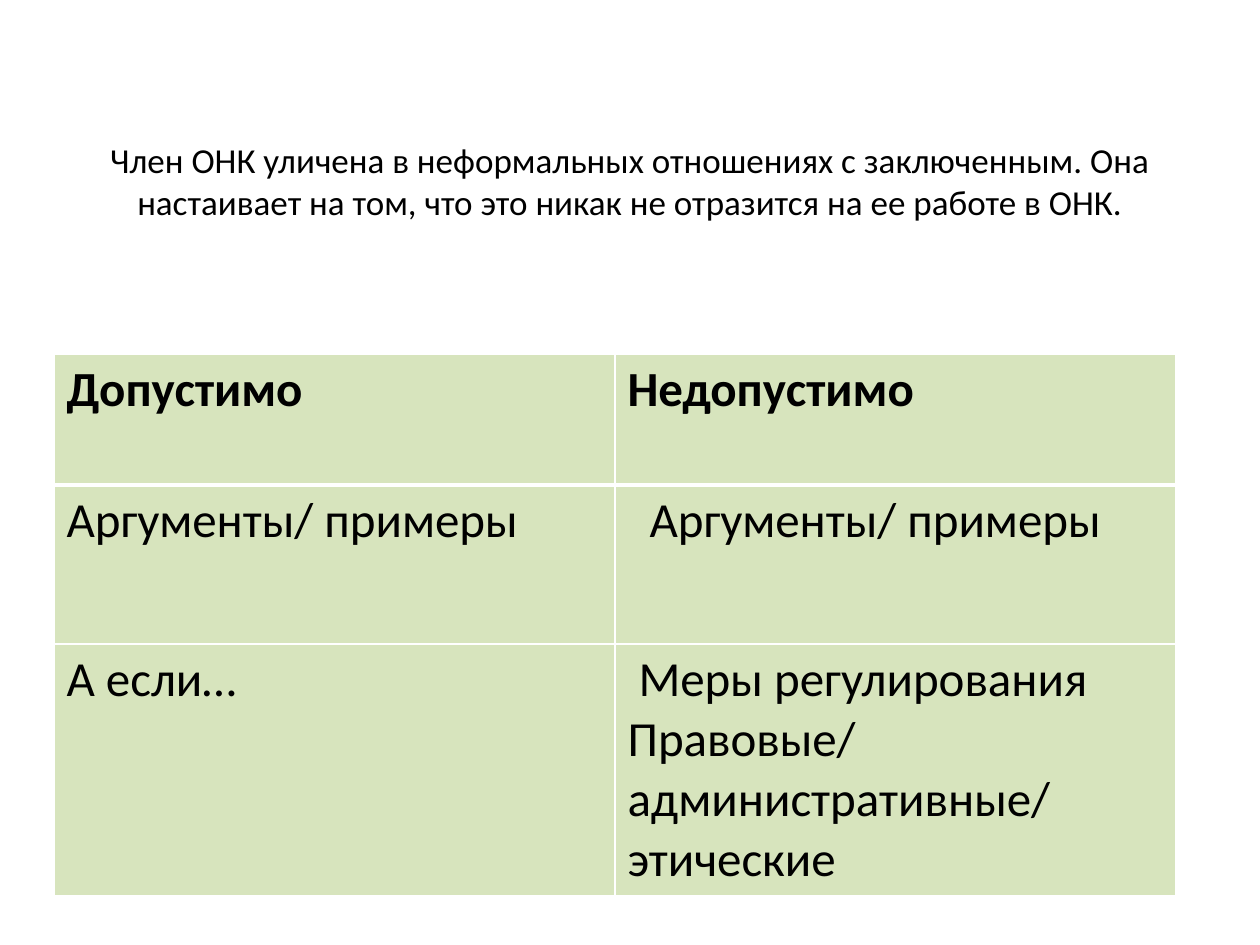
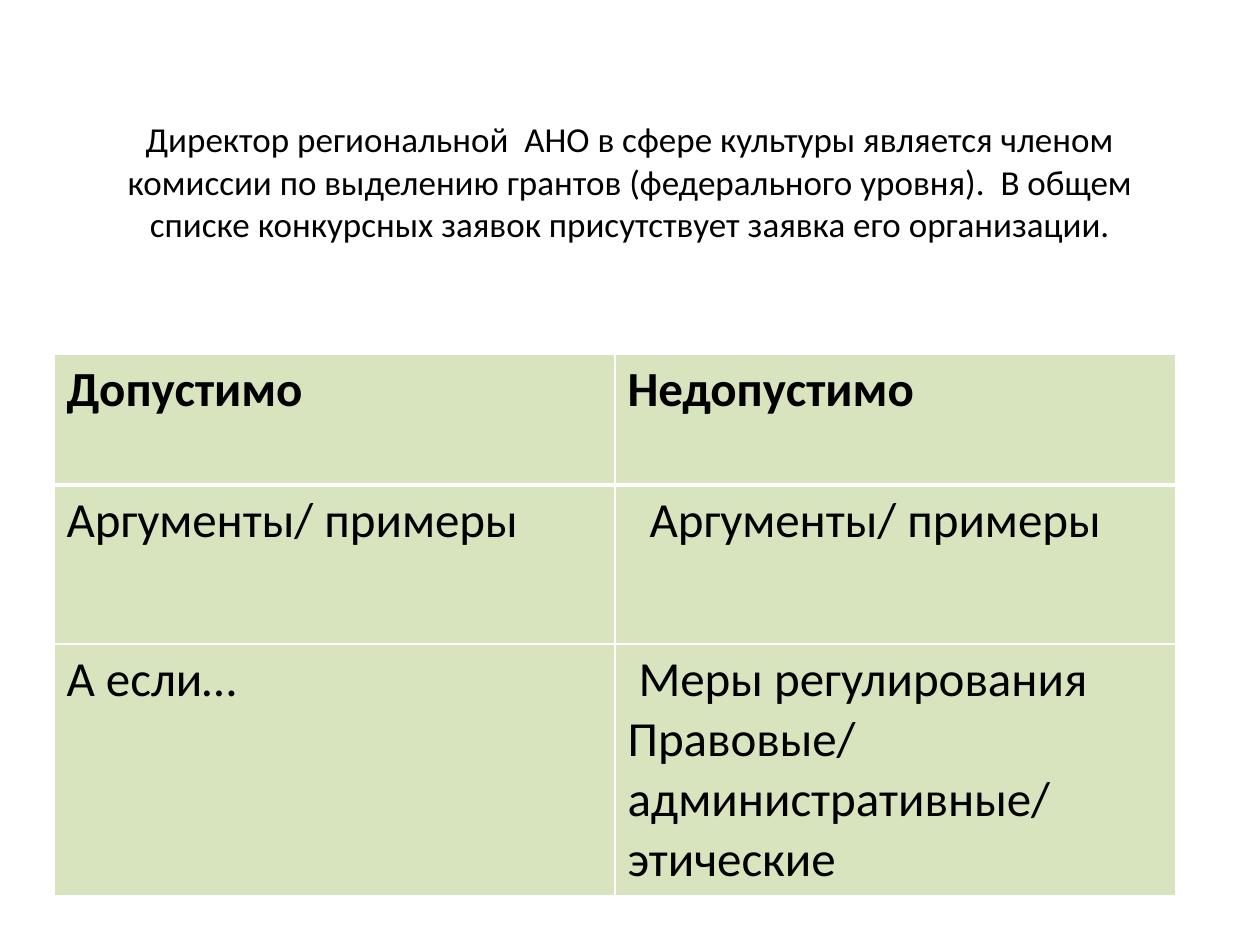
from lxml.etree import SubElement
from pptx import Presentation
from pptx.dml.color import RGBColor
from pptx.enum.text import MSO_ANCHOR, PP_ALIGN
from pptx.oxml.ns import qn
from pptx.util import Pt

PX = 914400 // 126
COLORS = {"text": "000000", "cell": "D7E4BD", "border": "FFFFFF"}
FONT = "Calibri"

CASES = [
    "Член ОНК уличена в неформальных отношениях с заключенным. "
    "Она настаивает на том, что это никак не отразится на ее работе в ОНК.",
    "Директор региональной  АНО в сфере культуры является членом комиссии "
    "по выделению грантов (федерального уровня).  В общем списке конкурсных "
    "заявок присутствует заявка его организации.",
]
# Each cell: text and indent of its first paragraph in px
ROWS = [
    [("Допустимо", 0), ("Недопустимо", 0)],
    [("Аргументы/ примеры", 0), ("Аргументы/ примеры", 22)],
    [("А если…", 0),
     ("Меры регулирования\nПравовые/ административные/ этические", 11)],
]
TITLE_BOX = (63, 38, 1134, 286)
TABLE_LEFT, TABLE_TOP = 54, 354
COLUMN_WIDTH = 561
ROW_HEIGHTS = [131, 159, 252]


def px(length):
    return length * PX


def style_runs(frame, size, bold=False):
    for para in frame.paragraphs:
        for span in para.runs:
            font = span.font
            font.name, font.size, font.bold = FONT, Pt(size), bold
            font.color.rgb = RGBColor.from_string(COLORS["text"])


def add_border(cell, side, width):
    line = SubElement(cell._tc.get_or_add_tcPr(), qn(f"a:ln{side}"), w=str(Pt(width)))
    fill = SubElement(line, qn("a:solidFill"))
    SubElement(fill, qn("a:srgbClr"), val=COLORS["border"])


def add_title(page, text):
    title = page.shapes.title
    title.left, title.top, title.width, title.height = map(px, TITLE_BOX)
    frame = title.text_frame
    frame.text = text
    frame.word_wrap = True
    frame.vertical_anchor = MSO_ANCHOR.MIDDLE
    frame.paragraphs[0].alignment = PP_ALIGN.CENTER
    style_runs(frame, 20)


def fill_cell(cell, text, indent, row):
    frame = cell.text_frame
    frame.text = text
    frame.paragraphs[0]._p.get_or_add_pPr().set("marL", str(px(indent)))
    style_runs(frame, 28, bold=row == 0)
    # The rule under the heading row is thicker than the others
    widths = {"L": 1, "R": 1, "T": 3 if row == 1 else 1, "B": 3 if row == 0 else 1}
    for side, width in widths.items():
        add_border(cell, side, width)
    cell.fill.solid()
    cell.fill.fore_color.rgb = RGBColor.from_string(COLORS["cell"])


def add_argument_table(page):
    columns = len(ROWS[0])
    table = page.shapes.add_table(
        len(ROWS), columns, px(TABLE_LEFT), px(TABLE_TOP),
        px(COLUMN_WIDTH * columns), px(sum(ROW_HEIGHTS))).table
    table.horz_banding = False
    for row, (cells, height) in enumerate(zip(ROWS, ROW_HEIGHTS)):
        table.rows[row].height = px(height)
        for column, (text, indent) in enumerate(cells):
            fill_cell(table.cell(row, column), text, indent, row)


def main():
    deck = Presentation()
    deck.slide_width, deck.slide_height = px(1260), px(945)
    title_only = deck.slide_layouts[5]
    for case in CASES:
        page = deck.slides.add_slide(title_only)
        add_title(page, case)
        add_argument_table(page)
    deck.save("out.pptx")


if __name__ == "__main__":
    main()
